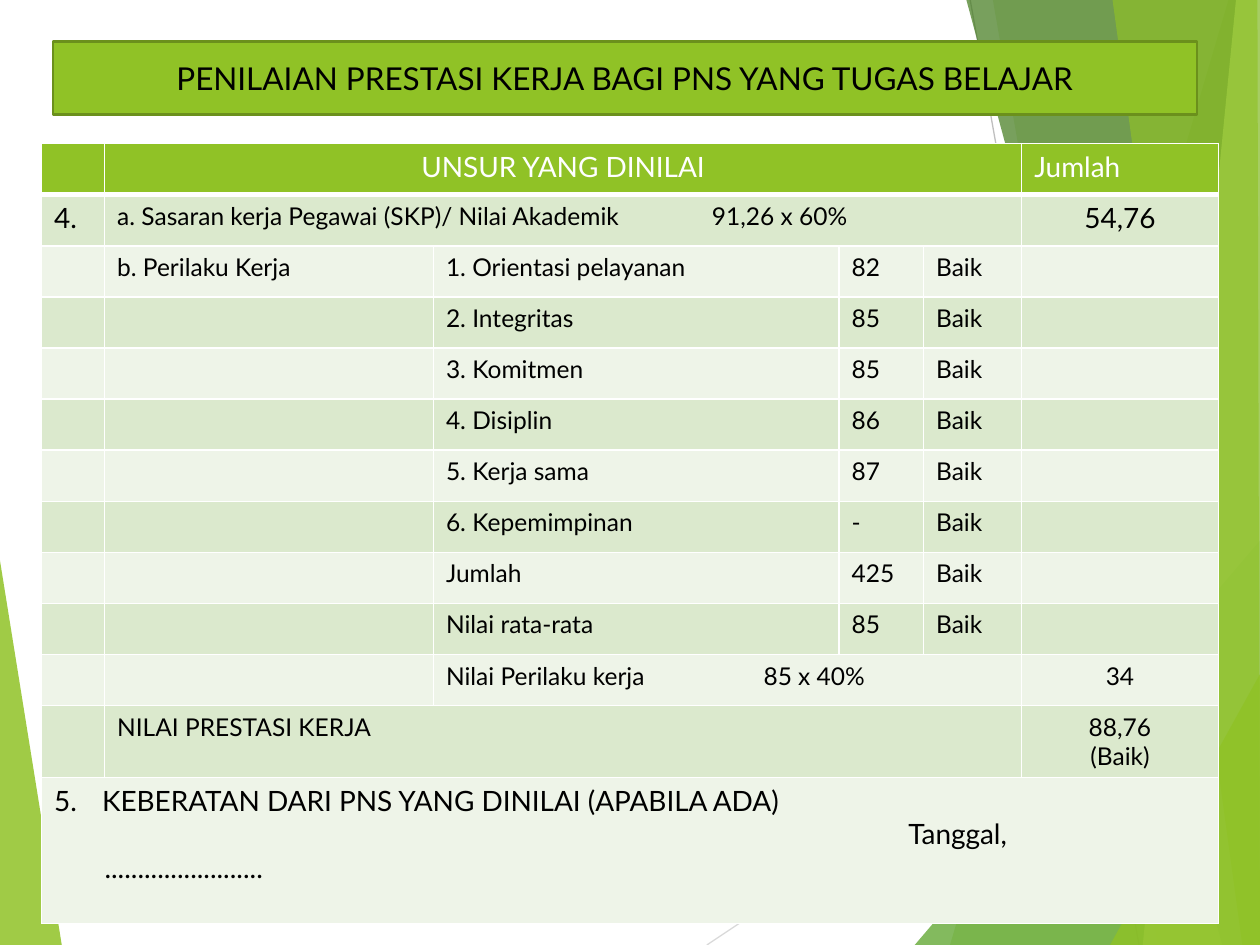
from dataclasses import dataclass

from lxml.etree import SubElement
from pptx import Presentation
from pptx.dml.color import RGBColor
from pptx.enum.text import MSO_ANCHOR, MSO_AUTO_SIZE, PP_ALIGN
from pptx.oxml.ns import qn
from pptx.util import Inches, Pt


@dataclass(frozen=True)
class Theme:
    font: str = "Lato"
    green: str = "90C226"
    title_edge: str = "6B901C"
    leaf: str = "54A021"
    forest: str = "3F7819"
    lime: str = "C0E474"
    bands: tuple = ("EEF4E8", "DBE9CD")
    white: str = "FFFFFF"
    black: str = "000000"
    title_size: int = 18
    heading_size: int = 16
    body_size: int = 14


THEME = Theme()
CENTER = PP_ALIGN.CENTER
COLUMN_WIDTHS = (0.5, 2.61, 3.22, 0.67, 0.78, 1.56)
TABLE_HEIGHT, RESULT_HEIGHT, OBJECTION_HEIGHT = 6.19, 0.57, 1.16
BEHAVIOURS = (
    ("1. Orientasi pelayanan", "82"),
    ("2. Integritas", "85"),
    ("3. Komitmen", "85"),
    ("4. Disiplin", "86"),
    ("5. Kerja sama", "87"),
    ("6. Kepemimpinan", "-"),
    ("Jumlah", "425"),
    ("Nilai rata-rata", "85"),
)


class SlideBuilder:
    def __init__(self, slide, theme):
        self.slide = slide
        self.theme = theme

    def paint(self, fill, color, opacity=100):
        fill.solid()
        fill.fore_color.rgb = RGBColor.from_string(color)
        if opacity < 100:
            tint = fill._xPr.find(qn("a:solidFill"))[0]
            SubElement(tint, qn("a:alpha"), val=str(opacity * 1000))

    def add_text(self, paragraph, text, size, color=None, align=None):
        paragraph.alignment = align
        run = paragraph.add_run()
        run.text = text
        font = run.font
        font.name, font.size, font.bold = self.theme.font, Pt(size), False
        font.color.rgb = RGBColor.from_string(color or self.theme.black)

    def facet(self, points, color, opacity):
        (x, y), *others = points
        outline = self.slide.shapes.build_freeform(Inches(x), Inches(y), scale=1.0)
        outline.add_line_segments([(Inches(a), Inches(b)) for a, b in others], close=True)
        shape = outline.convert_to_shape()
        shape.shadow.inherit = False
        self.paint(shape.fill, color, opacity)
        shape.line.fill.background()

    def hairline(self, start, end, color):
        line = self.slide.shapes.add_connector(1, *map(Inches, start + end))
        line.line.color.rgb = RGBColor.from_string(color)
        line.line.width = Pt(0.75)
        SubElement(line._element.spPr, qn("a:effectLst"))

    def title(self, text, left, top, width, height):
        """Turn the title placeholder into a rounded banner in front of the rest."""
        banner = self.slide.shapes.title
        banner.left, banner.top = Inches(left), Inches(top)
        banner.width, banner.height = Inches(width), Inches(height)
        geometry = SubElement(banner._element.spPr, qn("a:prstGeom"), prst="roundRect")
        SubElement(geometry, qn("a:avLst"))
        self.paint(banner.fill, self.theme.green)
        banner.line.color.rgb = RGBColor.from_string(self.theme.title_edge)
        banner.line.width = Pt(1.5)
        frame = banner.text_frame
        frame.auto_size = MSO_AUTO_SIZE.NONE
        frame.vertical_anchor = MSO_ANCHOR.MIDDLE
        self.add_text(frame.paragraphs[0], text, self.theme.title_size, align=CENTER)
        self.slide.shapes._spTree.append(banner._element)

    def table(self, left, top, widths, heights):
        table = self.slide.shapes.add_table(
            len(heights), len(widths), Inches(left), Inches(top),
            Inches(sum(widths)), Inches(sum(heights))).table
        for column, width in zip(table.columns, widths):
            column.width = Inches(width)
        for index, (row, height) in enumerate(zip(table.rows, heights)):
            row.height = Inches(height)
            color = self.theme.bands[index % 2] if index else self.theme.green
            for cell in row.cells:
                self.borders(cell, bottom=1 if index else 3)
                self.paint(cell.fill, color)
        return table

    def borders(self, cell, bottom):
        properties = cell._tc.get_or_add_tcPr()
        for side, width in (("L", 1), ("R", 1), ("T", 1), ("B", bottom)):
            edge = SubElement(properties, qn(f"a:ln{side}"), w=str(Pt(width)))
            fill = SubElement(edge, qn("a:solidFill"))
            SubElement(fill, qn("a:srgbClr"), val=self.theme.white)

    def cell(self, table, row, column, *lines, size=None, color=None, align=None, span=1):
        cell = table.cell(row, column)
        if span > 1:
            cell.merge(table.cell(row, column + span - 1))
        frame = cell.text_frame
        for index, text in enumerate(lines):
            paragraph = frame.add_paragraph() if index else frame.paragraphs[0]
            self.add_text(paragraph, text, size or self.theme.body_size, color, align)
        return frame.paragraphs

    def indent(self, paragraph, margin, first):
        properties = paragraph._p.get_or_add_pPr()
        properties.set("marL", str(Inches(margin)))
        properties.set("indent", str(Inches(first)))
        return properties

    def tab_stop(self, paragraph, position):
        stops = SubElement(paragraph._p.get_or_add_pPr(), qn("a:tabLst"))
        SubElement(stops, qn("a:tab"), pos=str(Inches(position)), algn="l")


def draw_background(builder):
    theme = builder.theme
    builder.facet([(0, 4.45), (0.49, 7.5), (0, 7.5)], theme.green, 85)
    builder.hairline((5.61, 7.5), (10, 4.57), "D9D9D9")
    builder.hairline((7.7, 0), (9.04, 7.5), "BFBFBF")
    facets = (
        ([(9.75, 0), (7.54, 7.5), (10, 7.5), (10, 0)], theme.green, 30),
        ([(7.88, 0), (9.19, 7.5), (10, 7.5), (10, 0)], theme.green, 20),
        ([(7.26, 7.5), (10, 4.29), (10, 7.5)], theme.leaf, 72),
        ([(7.67, 0), (9.7, 7.5), (10, 7.5), (10, 0)], theme.forest, 70),
        ([(9.81, 0), (9.07, 7.5), (10, 7.5), (10, 0)], theme.lime, 70),
        ([(8.83, 0), (9.86, 7.5), (10, 7.5), (9.98, 0)], theme.green, 65),
        ([(8.81, 7.5), (10, 5.35), (10, 7.5)], theme.green, 80),
    )
    for points, color, opacity in facets:
        builder.facet(points, color, opacity)


def draw_assessment(builder):
    heading = builder.theme.heading_size
    white = builder.theme.white
    row_height = (TABLE_HEIGHT - RESULT_HEIGHT - OBJECTION_HEIGHT) / 11
    heights = [row_height] * 11 + [RESULT_HEIGHT, OBJECTION_HEIGHT]
    table = builder.table(0.33, 1.14, COLUMN_WIDTHS, heights)

    builder.cell(table, 0, 1, "UNSUR YANG DINILAI", size=heading, color=white,
                 align=CENTER, span=4)
    builder.cell(table, 0, 5, "Jumlah", size=heading, color=white)
    builder.cell(table, 1, 0, "4.", size=heading)
    target = builder.cell(
        table, 1, 1, "a. Sasaran kerja Pegawai (SKP)/ Nilai Akademik\t91,26 x 60%", span=4)
    builder.tab_stop(target[0], 4.72)
    builder.cell(table, 1, 5, "54,76", size=heading, align=CENTER)

    builder.cell(table, 2, 1, "b. Perilaku Kerja")
    for row, (behaviour, score) in enumerate(BEHAVIOURS, start=2):
        for column, text in enumerate((behaviour, score, "Baik"), start=2):
            builder.cell(table, row, column, text)

    conduct = builder.cell(table, 10, 2, "Nilai Perilaku kerja\t85 x 40%", span=3)
    builder.tab_stop(conduct[0], 2.52)
    builder.cell(table, 10, 5, "34", align=CENTER)
    builder.cell(table, 11, 1, "NILAI PRESTASI KERJA", span=4)
    builder.cell(table, 11, 5, "88,76", "(Baik)", align=CENTER)

    objection, date, dots = builder.cell(
        table, 12, 0, "KEBERATAN DARI PNS YANG DINILAI (APABILA ADA)", "Tanggal,",
        "........................", size=heading, span=6)
    numbered = builder.indent(objection, 0.38, -0.38)
    SubElement(numbered, qn("a:buAutoNum"), type="arabicPeriod", startAt="5")
    builder.indent(date, 0.38, 6.4)
    builder.indent(dots, 0.38, 0.02)


def main():
    presentation = Presentation()
    presentation.slide_width, presentation.slide_height = Inches(10), Inches(7.5)
    slide = presentation.slides.add_slide(presentation.slide_layouts[5])
    builder = SlideBuilder(slide, THEME)
    draw_background(builder)
    draw_assessment(builder)
    builder.title("PENILAIAN PRESTASI KERJA BAGI PNS YANG TUGAS BELAJAR",
                  0.42, 0.33, 9.08, 0.58)
    presentation.save("out.pptx")


if __name__ == "__main__":
    main()
